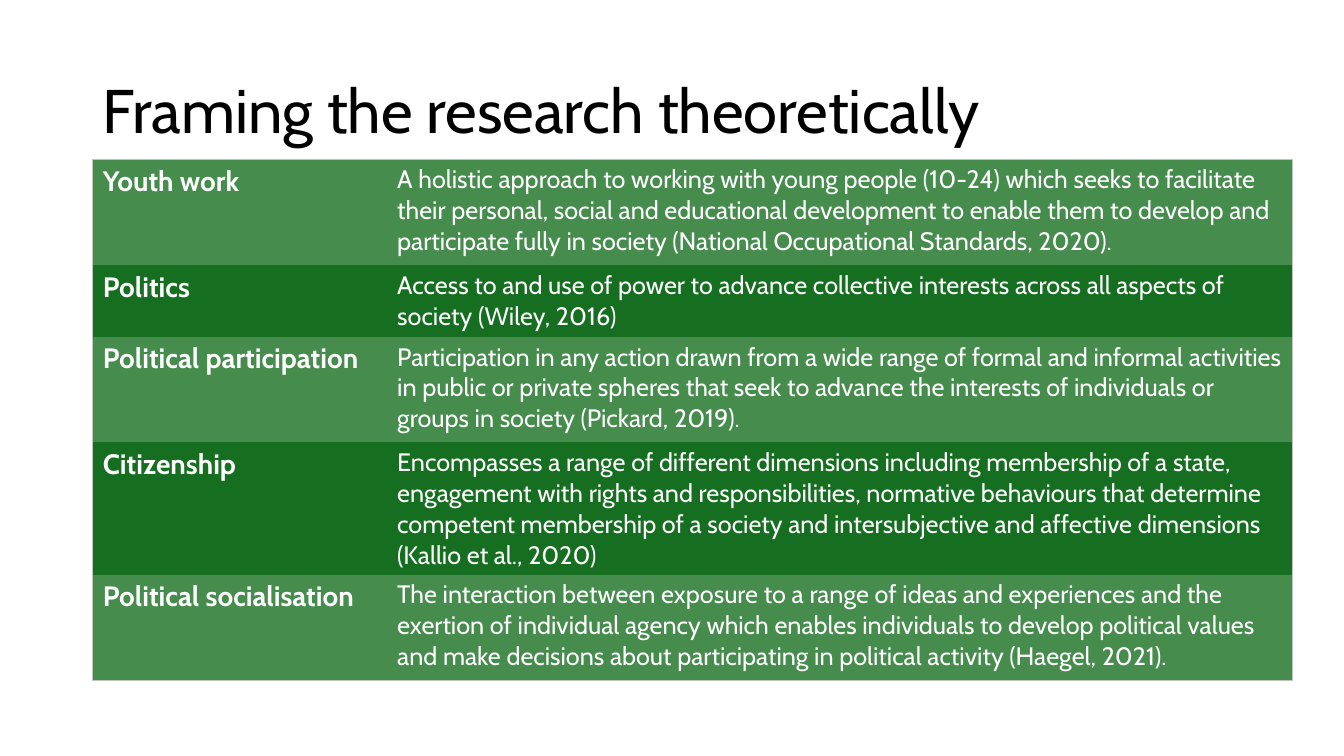
from lxml.etree import SubElement
from pptx import Presentation
from pptx.dml.color import RGBColor
from pptx.enum.text import MSO_ANCHOR
from pptx.oxml.ns import qn
from pptx.util import Inches, Pt

COLOURS = {
    "title": "000000",
    "text": "FFFFFF",
    "light": "458C4D",
    "dark": "166F20",
    "edge": "BDC7BE",
}
FORMATS = {
    "title": {"size": Pt(44), "bold": False},
    "term": {"size": Pt(20), "bold": True},
    "definition": {"size": Pt(18), "bold": False},
}
CONCEPTS = [
    ("Youth work", 1.05,
     "A holistic approach to working with young people (10-24) which seeks to "
     "facilitate their personal, social and educational development to enable "
     "them to develop and participate fully in society (National Occupational "
     "Standards, 2020)."),
    ("Politics", 0.71,
     "Access to and use of power to advance collective interests across all "
     "aspects of society (Wiley, 2016)"),
    ("Political participation", 1.05,
     "Participation in any action drawn from a wide range of formal and informal "
     "activities in public or private spheres that seek to advance the interests "
     "of individuals or groups in society (Pickard, 2019)."),
    ("Citizenship", 1.31,
     "Encompasses a range of different dimensions including membership of a "
     "state, engagement with rights and responsibilities, normative behaviours "
     "that determine competent membership of a society and intersubjective and "
     "affective dimensions (Kallio et al., 2020)"),
    ("Political socialisation", 1.05,
     "The interaction between exposure to a range of ideas and experiences and "
     "the exertion of individual agency which enables individuals to develop "
     "political values and make decisions about participating in political "
     "activity (Haegel, 2021)."),
]


class TheorySlide:
    """Holds the style and the current slide, and adds its elements."""

    def __init__(self, deck, face="Cabin"):
        self.slide = deck.slides.add_slide(deck.slide_layouts[6])
        self.face = face

    def add_text(self, frame, text, role, colour):
        paragraph = frame.paragraphs[0]
        run = paragraph.add_run()
        run.text = text
        for name, value in {"name": self.face, **FORMATS[role]}.items():
            setattr(run.font, name, value)
        run.font.color.rgb = RGBColor.from_string(COLOURS[colour])
        return paragraph

    def title(self, text, left, top, width, height):
        frame = self.slide.shapes.add_textbox(
            Inches(left), Inches(top), Inches(width), Inches(height)).text_frame
        frame.word_wrap = True
        frame.vertical_anchor = MSO_ANCHOR.MIDDLE
        self.add_text(frame, text, "title", "title").line_spacing = 0.9

    def borders(self, cell, outer):
        properties = cell._tc.get_or_add_tcPr()
        for side, visible in outer.items():
            line = SubElement(properties, qn(f"a:ln{side}"), w=str(Pt(1)))
            if visible:
                fill = SubElement(line, qn("a:solidFill"))
                SubElement(fill, qn("a:srgbClr"), val=COLOURS["edge"])
            else:
                SubElement(line, qn("a:noFill"))

    def definitions(self, concepts, left, top, widths):
        height = sum(concept[1] for concept in concepts)
        table = self.slide.shapes.add_table(
            len(concepts), len(widths), Inches(left), Inches(top),
            Inches(sum(widths)), Inches(height)).table
        table.first_row = table.horz_banding = False
        for column, width in zip(table.columns, widths):
            column.width = Inches(width)
        for index, (term, row_height, definition) in enumerate(concepts):
            table.rows[index].height = Inches(row_height)
            band = "dark" if index % 2 else "light"
            entries = (("term", term), ("definition", definition))
            for position, (role, text) in enumerate(entries):
                cell = table.cell(index, position)
                self.borders(cell, {
                    "L": position == 0,
                    "R": position == len(widths) - 1,
                    "T": index == 0,
                    "B": index == len(concepts) - 1,
                })
                cell.fill.solid()
                cell.fill.fore_color.rgb = RGBColor.from_string(COLOURS[band])
                self.add_text(cell.text_frame, text, role, "text")


def main():
    deck = Presentation()
    deck.slide_width, deck.slide_height = Inches(13.33), Inches(7.5)
    theory = TheorySlide(deck)
    theory.title("Framing the research theoretically", 0.92, 0.4, 11.5, 1.45)
    theory.definitions(CONCEPTS, 0.92, 1.58, (2.92, 8.98))
    deck.save("out.pptx")


if __name__ == "__main__":
    main()
